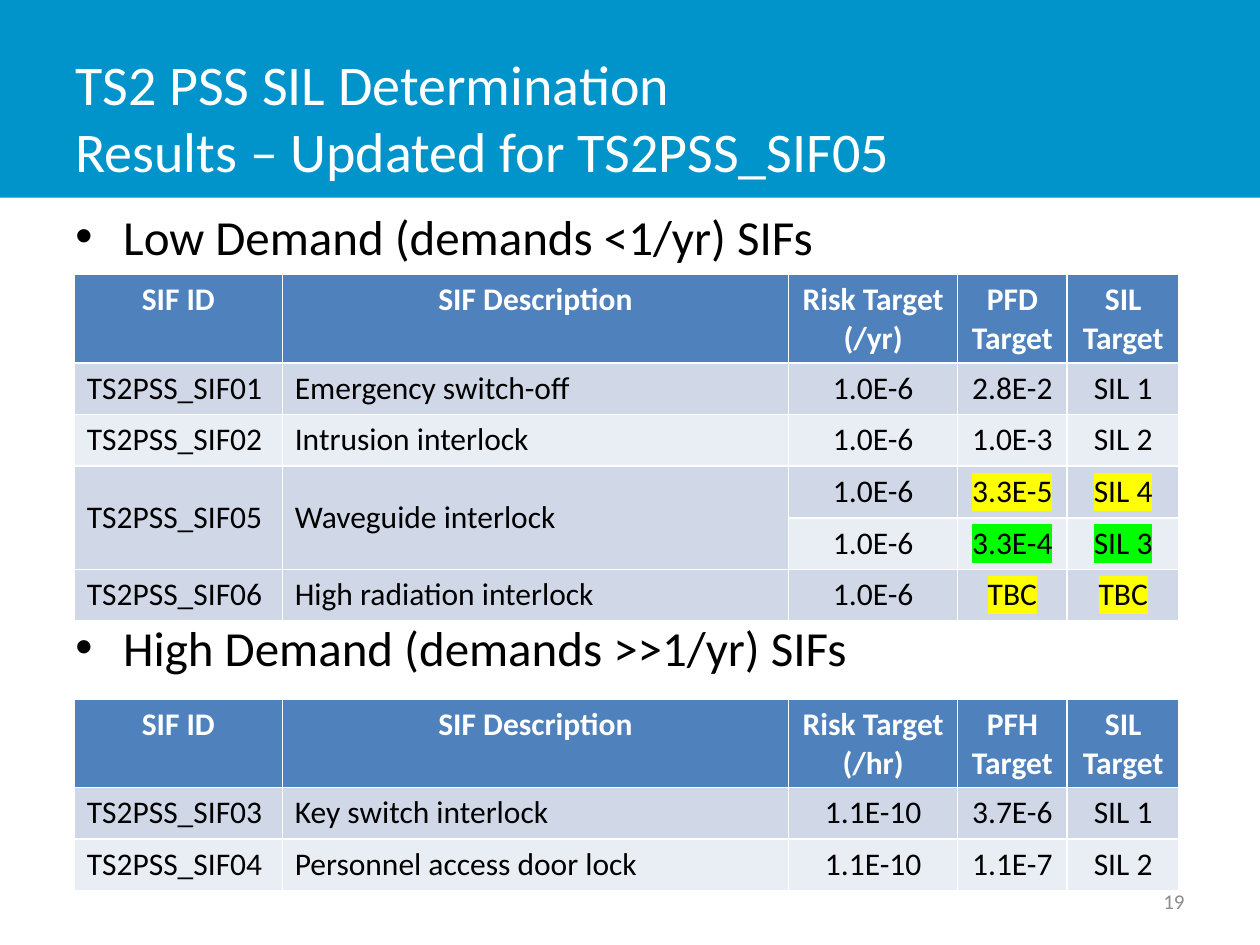
import dataclasses

import lxml.etree
import pptx
import pptx.dml.color
import pptx.enum.shapes
import pptx.enum.text
import pptx.oxml.ns
import pptx.util

Inches = pptx.util.Inches
ALIGN = pptx.enum.text.PP_ALIGN
ANCHOR = pptx.enum.text.MSO_ANCHOR
qn = pptx.oxml.ns.qn


@dataclasses.dataclass(frozen=True)
class Theme:
    """Colours and type sizes of the slide."""
    font: str = "Calibri"
    banner: str = "0094CA"
    header: str = "4F81BD"
    bands: tuple = ("D0D8E8", "E9EDF4")
    white: str = "FFFFFF"
    black: str = "000000"
    grey: str = "8C8C8C"
    yellow: str = "FFFF00"
    green: str = "00FF00"
    title: int = 32
    body: int = 28
    table: int = 18
    number: int = 12


T = Theme()
WIDTHS = (1.65, 4.02, 1.34, 0.87, 0.89)
HEADER_HEIGHT = 0.7
ROW_HEIGHT = 0.41

LOW_DEMAND = [
    ("SIF ID", "SIF Description", "Risk Target (/yr)", "PFD Target", "SIL Target"),
    ("TS2PSS_SIF01", "Emergency switch-off", "1.0E-6", "2.8E-2", "SIL 1"),
    ("TS2PSS_SIF02", "Intrusion interlock", "1.0E-6", "1.0E-3", "SIL 2"),
    ("TS2PSS_SIF05", "Waveguide interlock", "1.0E-6", "3.3E-5", "SIL 4"),
    ("", "", "1.0E-6", "3.3E-4", "SIL 3"),
    ("TS2PSS_SIF06", "High radiation interlock", "1.0E-6", "TBC", "TBC"),
]
HIGH_DEMAND = [
    ("SIF ID", "SIF Description", "Risk Target (/hr)", "PFH Target", "SIL Target"),
    ("TS2PSS_SIF03", "Key switch interlock", "1.1E-10", "3.7E-6", "SIL 1"),
    ("TS2PSS_SIF04", "Personnel access door lock", "1.1E-10", "1.1E-7", "SIL 2"),
]
HIGHLIGHTS = {3: T.yellow, 4: T.green, 5: T.yellow}


def rgb(value):
    """Return a colour object for a hex string."""
    return pptx.dml.color.RGBColor.from_string(value)


def add_run(p, text, size, color, bold=False, highlight=None):
    """Add one formatted run to a paragraph."""
    r = p.add_run()
    r.text = text
    r.font.size = pptx.util.Pt(size)
    r.font.bold = bold
    r.font.color.rgb = rgb(color)
    r.font.name = T.font
    if highlight:
        mark = lxml.etree.Element(qn("a:highlight"))
        lxml.etree.SubElement(mark, qn("a:srgbClr"), val=highlight)
        r.font._element.find(qn("a:latin")).addprevious(mark)


def add_text_box(s, left, top, width, height, anchor):
    """Add a wrapping text box and return its text frame."""
    sp = s.shapes.add_textbox(Inches(left), Inches(top), Inches(width), Inches(height))
    tf = sp.text_frame
    tf.word_wrap = True
    tf.vertical_anchor = anchor
    return tf


def add_banner(s, width, height):
    """Add the coloured band behind the title."""
    sp = s.shapes.add_shape(pptx.enum.shapes.MSO_SHAPE.RECTANGLE,
                            0, 0, Inches(width), Inches(height))
    sp.shadow.inherit = False
    sp.fill.solid()
    sp.fill.fore_color.rgb = rgb(T.banner)
    sp.line.fill.background()


def add_title(s, lines):
    """Add the title with a line break between its lines."""
    p = add_text_box(s, 0.5, 0.3, 7.81, 1.25, ANCHOR.MIDDLE).paragraphs[0]
    for i, line in enumerate(lines):
        if i:
            p.add_line_break()
        add_run(p, line, T.title, T.white)


def add_bullets(s, texts, gap):
    """Add bulleted headings, leaving room for a table between them."""
    tf = add_text_box(s, 0.5, 1.59, 9, 5.4, ANCHOR.TOP)
    for i, text in enumerate(texts):
        p = tf.add_paragraph() if i else tf.paragraphs[0]
        if i:
            p.space_before = pptx.util.Pt(gap)
        pPr = p._p.get_or_add_pPr()
        pPr.set("marL", str(Inches(0.38)))
        pPr.set("indent", str(-Inches(0.38)))
        lxml.etree.SubElement(pPr, qn("a:buFont"), typeface="Arial")
        lxml.etree.SubElement(pPr, qn("a:buChar"), char="•")
        add_run(p, text, T.body, T.black)


def fill_cell(cell, text, row, col, highlight):
    """Colour a table cell and write its text."""
    header = row == 0
    cell.fill.solid()
    cell.fill.fore_color.rgb = rgb(T.header if header else T.bands[(row - 1) % 2])
    if text:
        p = cell.text_frame.paragraphs[0]
        p.alignment = ALIGN.CENTER if header or col > 1 else ALIGN.LEFT
        add_run(p, text, T.table, T.white if header else T.black, header, highlight)


def add_sif_table(s, top, rows, highlights):
    """Add a table of safety functions, merging cells over blank ones."""
    heights = [HEADER_HEIGHT] + [ROW_HEIGHT] * (len(rows) - 1)
    table = s.shapes.add_table(len(rows), len(WIDTHS), Inches(0.59), Inches(top),
                               Inches(sum(WIDTHS)), Inches(sum(heights))).table
    for column, width in zip(table.columns, WIDTHS):
        column.width = Inches(width)
    for i, values in enumerate(rows):
        table.rows[i].height = Inches(heights[i])
        for j, text in enumerate(values):
            cell = table.cell(i, j)
            fill_cell(cell, text, i, j, highlights.get(i) if j > 2 else None)
            if not text:
                above = table.cell(i - 1, j)
                above.merge(cell)
                above.vertical_anchor = ANCHOR.MIDDLE


def add_page_number(s, number):
    """Add the page number at the lower right."""
    p = add_text_box(s, 7.17, 6.95, 2.33, 0.4, ANCHOR.MIDDLE).paragraphs[0]
    p.alignment = ALIGN.RIGHT
    add_run(p, number, T.number, T.grey)


def main():
    """Build and save the slide."""
    prs = pptx.Presentation()
    prs.slide_width, prs.slide_height = Inches(10), Inches(7.5)
    s = prs.slides.add_slide(prs.slide_layouts[6])
    add_banner(s, 10, 1.57)
    add_title(s, ["TS2 PSS SIL Determination", "Results – Updated for TS2PSS_SIF05"])
    add_page_number(s, "19")
    add_bullets(s, ["Low Demand (demands <1/yr) SIFs",
                    "High Demand (demands >>1/yr) SIFs"], 201)
    add_sif_table(s, 2.18, LOW_DEMAND, HIGHLIGHTS)
    add_sif_table(s, 5.55, HIGH_DEMAND, {})
    prs.save("out.pptx")


if __name__ == "__main__":
    main()
